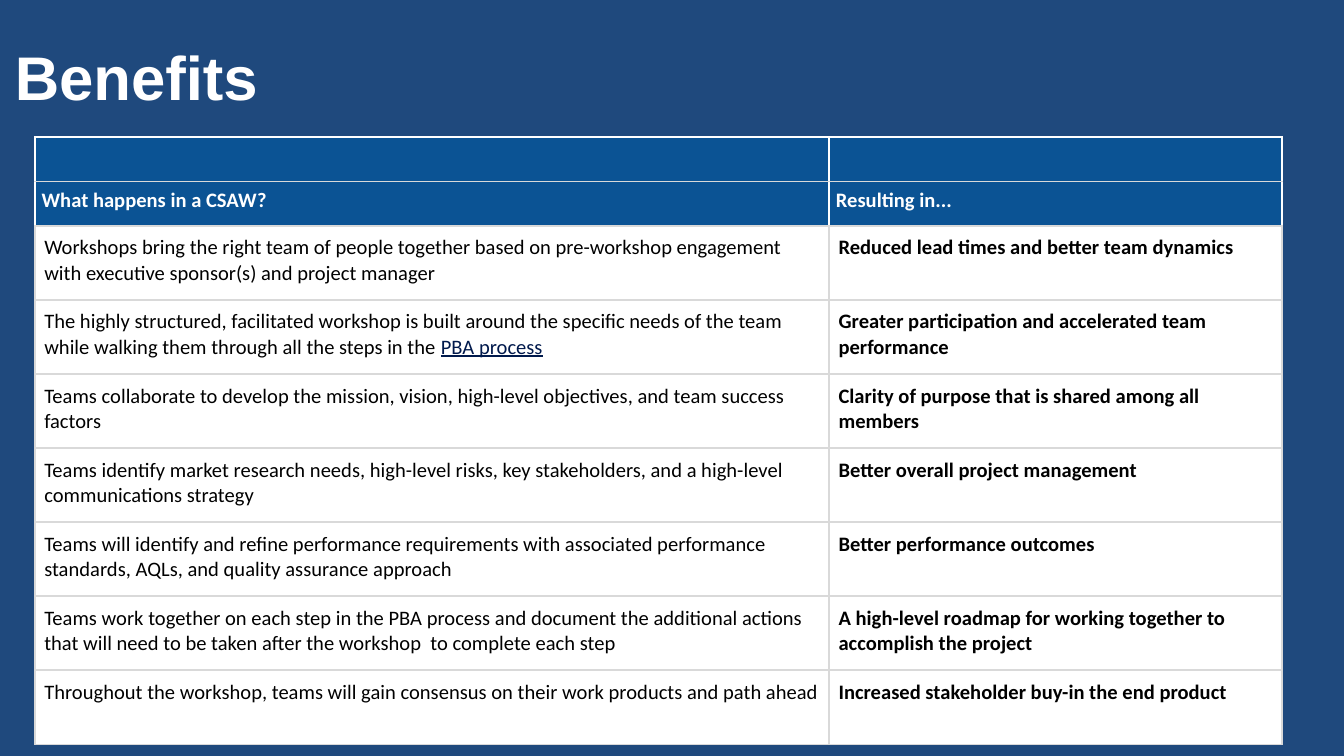
from lxml import etree
from pptx import Presentation
from pptx.dml.color import RGBColor
from pptx.enum.text import MSO_ANCHOR, PP_ALIGN
from pptx.oxml.ns import qn
from pptx.util import Inches, Pt

TOP = MSO_ANCHOR.TOP
LEFT = PP_ALIGN.LEFT
SIDES = ("left", "top", "right", "bottom")
HEX = {"navy": "1F497D", "head": "0B5394", "white": "FFFFFF",
       "black": "000000", "grey": "D9D9D9", "link": "00194C"}
HEADS = ("What happens in a CSAW?", "Resulting in...")
LINK = "PBA process"
ROWS = [
    ("Workshops bring the right team of people together based on pre-workshop engagement with executive sponsor(s) and project manager",
     "Reduced lead times and better team dynamics"),
    ("The highly structured, facilitated workshop is built around the specific needs of the team while walking them through all the steps in the ",
     "Greater participation and accelerated team performance"),
    ("Teams collaborate to develop the mission, vision, high-level objectives, and team success factors",
     "Clarity of purpose that is shared among all members"),
    ("Teams identify market research needs, high-level risks, key stakeholders, and a high-level communications strategy",
     "Better overall project management"),
    ("Teams will identify and refine performance requirements with associated performance standards, AQLs, and quality assurance approach",
     "Better performance outcomes"),
    ("Teams work together on each step in the PBA process and document the additional actions that will need to be taken after the workshop  to complete each step",
     "A high-level roadmap for working together to accomplish the project"),
    ("Throughout the workshop, teams will gain consensus on their work products and path ahead",
     "Increased stakeholder buy-in the end product "),
]


def color(name):
    return RGBColor.from_string(HEX[name])


def apply(item, form):
    for key, value in form.items():
        setattr(item, key, value)


def pad(item, size):
    apply(item, {f"margin_{side}": Inches(size) for side in SIDES})


def write(para, text, hue, **form):
    run = para.add_run()
    run.text = text
    apply(run.font, form)
    run.font.color.rgb = color(hue)


def edge(cell, hues):
    props = cell._tc.get_or_add_tcPr()
    for tag, hue in zip("LRTB", hues):
        line = etree.SubElement(props, qn(f"a:ln{tag}"), w=str(Pt(1)))
        fill = etree.SubElement(line, qn("a:solidFill"))
        etree.SubElement(fill, qn("a:srgbClr"), val=HEX[hue])


def style(cell, fill, hues, gap):
    edge(cell, hues)
    cell.fill.solid()
    cell.fill.fore_color.rgb = color(fill)
    pad(cell, gap)
    cell.vertical_anchor = TOP


def add_title(slide, box):
    title = slide.shapes.title
    apply(title, dict(zip(("left", "top", "width", "height"), map(Inches, box))))
    frame = title.text_frame
    pad(frame, 0.1)
    apply(frame, {"word_wrap": True, "vertical_anchor": TOP})
    para = frame.paragraphs[0]
    apply(para, {"alignment": LEFT, "line_spacing": 0.9})
    write(para, "Benefits", "white", name="Arial", size=Pt(33), bold=True)


def add_grid(slide, box):
    count = len(ROWS) + 2
    table = slide.shapes.add_table(count, 2, *map(Inches, box)).table
    apply(table, {"first_row": False, "horz_banding": False})
    wide, thin = 5.91, 0.33
    tall = (box[3] - 2 * thin) / len(ROWS)
    for col, width in zip(table.columns, (wide, box[2] - wide)):
        col.width = Inches(width)
    for num, row in enumerate(table.rows):
        row.height = Inches(thin if num < 2 else tall)

    font = {"name": "Calibri", "size": Pt(11)}
    for col, head in enumerate(HEADS):
        style(table.cell(0, col), "head", ("white", "white", "white", "grey"), 0)
        cell = table.cell(1, col)
        style(cell, "head", ("white", "white", "grey", "grey"), 0.05)
        write(cell.text_frame.paragraphs[0], head, "white", bold=True, **font)
    for num, texts in enumerate(ROWS, 2):
        for col, text in enumerate(texts):
            cell = table.cell(num, col)
            style(cell, "white", ["grey"] * 4, 0.07)
            para = cell.text_frame.paragraphs[0]
            write(para, text, "black", bold=col == 1, **font)
            if text.endswith("in the "):
                write(para, LINK, "link", bold=False, underline=True, **font)


def main():
    deck = Presentation()
    wide = Inches(10)
    apply(deck, {"slide_width": wide, "slide_height": wide * 9 // 16})
    slide = deck.slides.add_slide(deck.slide_layouts[5])
    back = slide.background.fill
    back.solid()
    back.fore_color.rgb = color("navy")
    add_title(slide, (0.01, 0.25, 9.32, 0.63))
    add_grid(slide, (0.26, 1.02, 9.28, 4.52))
    deck.save("out.pptx")


if __name__ == "__main__":
    main()
